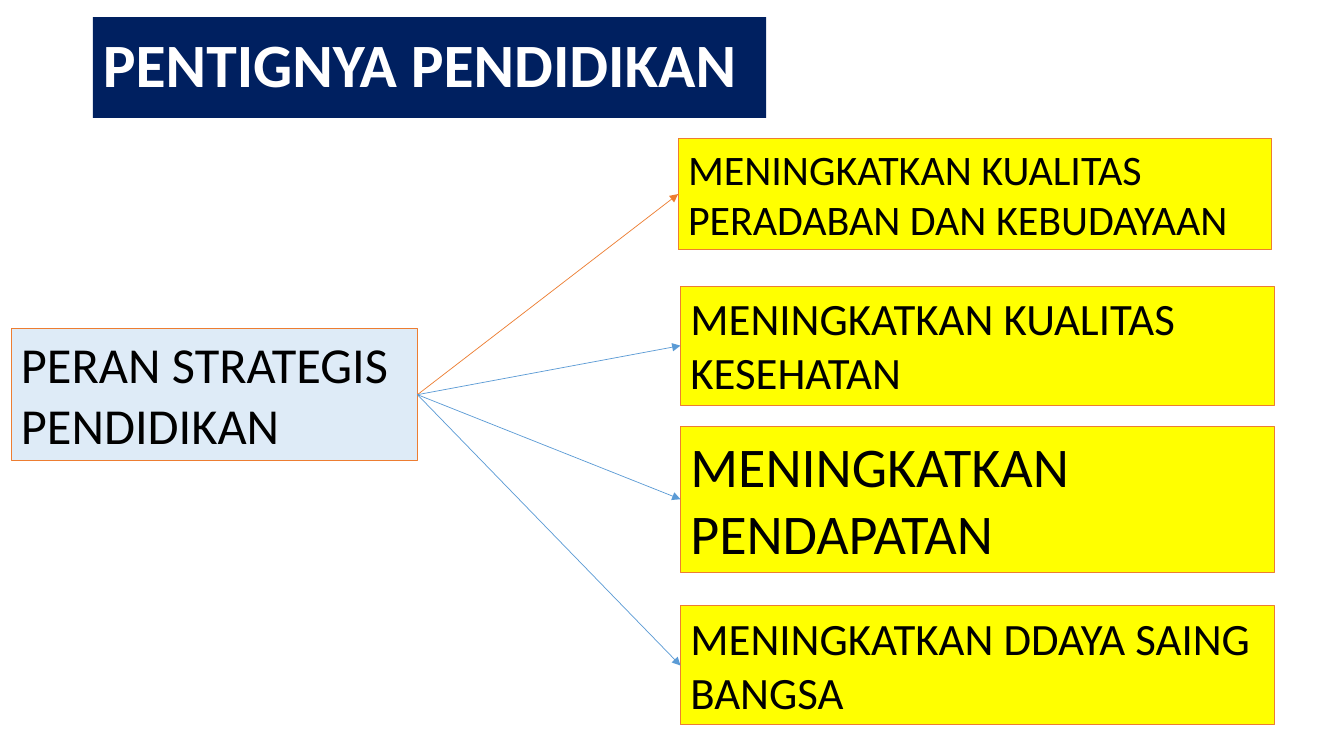
from lxml import etree
from pptx import Presentation
from pptx.dml.color import RGBColor
from pptx.enum.shapes import MSO_CONNECTOR as CONN, MSO_SHAPE as SHAPE
from pptx.enum.text import MSO_ANCHOR as ANCHOR, MSO_AUTO_SIZE as AUTOSIZE, PP_ALIGN as ALIGN
from pptx.oxml.ns import qn
from pptx.util import Cm, Pt

NAVY, PALE_BLUE, YELLOW = "002060", "DEEBF7", "FFFF00"
ORANGE, BLUE, BLACK, WHITE = "ED7D31", "5B9BD5", "000000", "FFFFFF"
LEFT_SIDE, RIGHT_SIDE = 1, 3

BENEFITS = [
    ("MENINGKATKAN KUALITAS PERADABAN DAN KEBUDAYAAN", 17.09, 3.48, 2.82, 30, ORANGE),
    ("MENINGKATKAN KUALITAS KESEHATAN", 17.15, 7.21, 3, 32, BLUE),
    ("MENINGKATKAN PENDAPATAN", 17.15, 10.74, 3.68, 40, BLUE),
    ("MENINGKATKAN DDAYA SAING BANGSA", 17.15, 15.27, 3, 32, BLUE),
]


def rgb(color):
    return RGBColor.from_string(color)


def fill(sp, color):
    sp.fill.solid()
    sp.fill.fore_color.rgb = rgb(color)


def write(sp, text, size, color, anchor, bold=False):
    tf = sp.text_frame
    tf.text = text
    tf.word_wrap = True
    tf.auto_size = AUTOSIZE.NONE
    tf.vertical_anchor = anchor
    p = tf.paragraphs[0]
    p.alignment = ALIGN.LEFT
    p.font.name = "Calibri"
    p.font.size = Pt(size)
    p.font.bold = bold
    p.font.color.rgb = rgb(color)
    return p


def add_title(s, text):
    sp = s.shapes.title
    sp.left, sp.top, sp.width, sp.height = Cm(2.34), Cm(0.43), Cm(16.97), Cm(2.54)
    fill(sp, NAVY)
    p = write(sp, text, 44, WHITE, ANCHOR.MIDDLE, bold=True)
    p.line_spacing = 0.9


def add_box(s, text, left, top, width, height, size, color):
    sp = s.shapes.add_shape(SHAPE.RECTANGLE, Cm(left), Cm(top), Cm(width), Cm(height))
    sp.shadow.inherit = False
    fill(sp, color)
    sp.line.color.rgb = rgb(ORANGE)
    sp.line.width = Pt(0.75)
    write(sp, text, size, BLACK, ANCHOR.TOP)
    return sp


def add_arrow(s, source, target, color):
    cxn = s.shapes.add_connector(CONN.STRAIGHT, 0, 0, 0, 0)
    cxn.begin_connect(source, RIGHT_SIDE)
    cxn.end_connect(target, LEFT_SIDE)
    cxn.line.color.rgb = rgb(color)
    cxn.line.width = Pt(0.5)
    etree.SubElement(cxn.line._get_or_add_ln(), qn("a:tailEnd"), type="triangle")
    etree.SubElement(cxn._element.spPr, qn("a:effectLst"))


def main():
    prs = Presentation()
    prs.slide_width, prs.slide_height = Cm(33.87), Cm(19.05)
    s = prs.slides.add_slide(prs.slide_layouts[5])
    add_title(s, "PENTIGNYA PENDIDIKAN")
    role = add_box(s, "PERAN STRATEGIS PENDIDIKAN", 0.28, 8.28, 10.24, 3.33, 36, PALE_BLUE)
    for text, left, top, height, size, arrow_color in BENEFITS:
        benefit = add_box(s, text, left, top, 14.96, height, size, YELLOW)
        add_arrow(s, role, benefit, arrow_color)
    prs.save("out.pptx")


if __name__ == "__main__":
    main()
